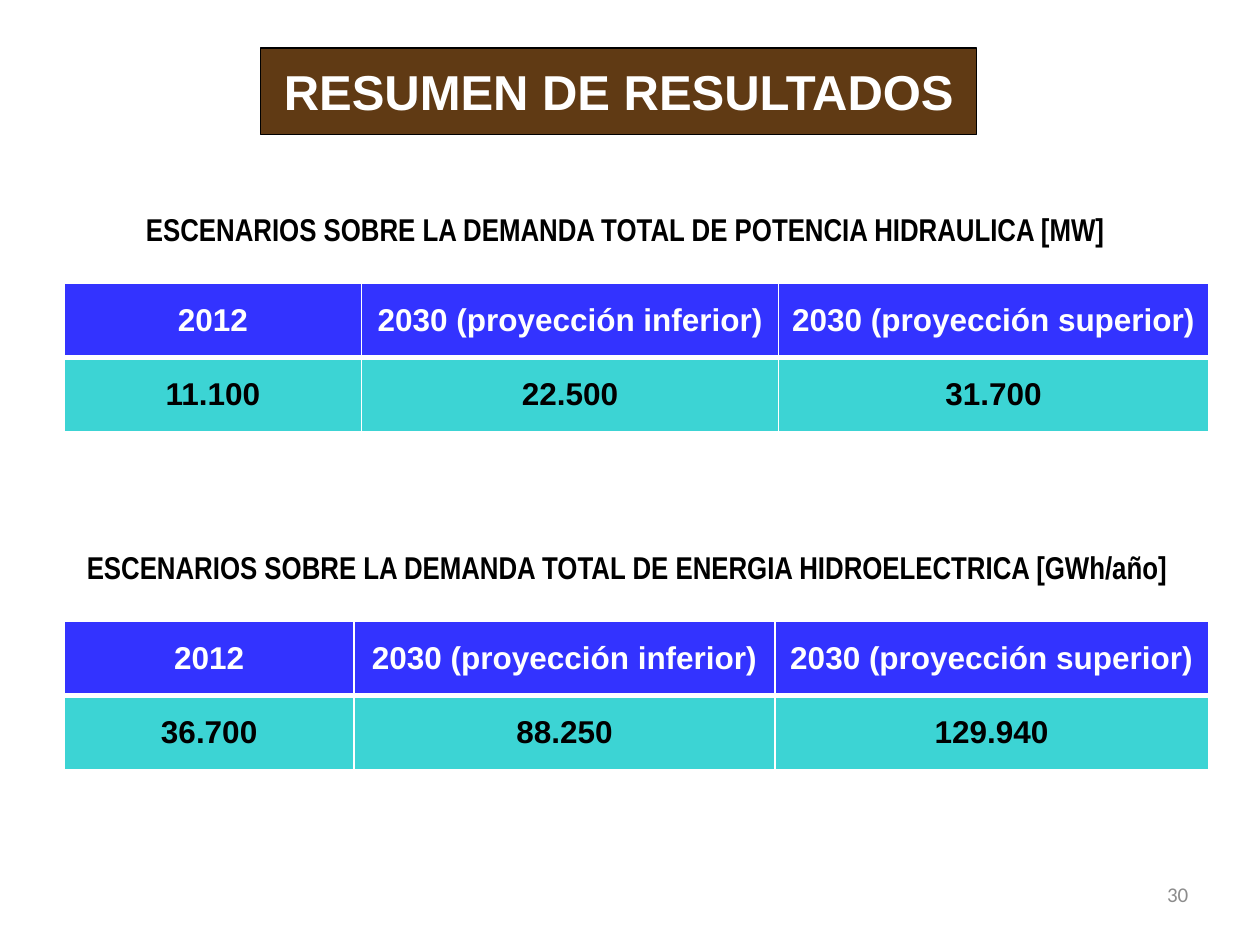
"""Build the results summary slide with two tables of demand scenarios."""
from lxml.etree import SubElement
from pptx import Presentation
from pptx.dml.color import RGBColor
from pptx.enum.shapes import MSO_SHAPE as Shape
from pptx.enum.text import MSO_ANCHOR as Anchor, MSO_AUTO_SIZE as AutoSize, PP_ALIGN as Align
from pptx.oxml.ns import qn
from pptx.util import Inches, Pt

WHITE = RGBColor(0xFF, 0xFF, 0xFF)
BLACK = RGBColor(0x00, 0x00, 0x00)
BROWN = RGBColor(0x60, 0x3A, 0x14)
BLUE = RGBColor(0x33, 0x33, 0xFF)
TURQUOISE = RGBColor(0x3C, 0xD4, 0xD4)
GRAY = RGBColor(0x8C, 0x8C, 0x8C)

HEADERS = ["2012", "2030 (proyección inferior)", "2030 (proyección superior)"]
SCENARIOS = [
    ("ESCENARIOS SOBRE LA DEMANDA TOTAL DE POTENCIA HIDRAULICA [MW]",
     1.06, 1.62, 7.88, [2.36, 3.31, 3.41], ["11.100", "22.500", "31.700"]),
    ("ESCENARIOS SOBRE LA DEMANDA TOTAL DE ENERGIA HIDROELECTRICA [GWh/año]",
     0.59, 4.3, 8.82, [2.3, 3.34, 3.44], ["36.700", "88.250", "129.940"]),
]
TABLE_LEFT = 0.51
TABLE_OFFSET = 0.63
ROW_HEIGHT = 0.59


def write_text(frame, text, font="Arial", size=18, color=BLACK, bold=True, align=Align.CENTER):
    paragraph = frame.paragraphs[0]
    paragraph.alignment = align
    run = paragraph.add_run()
    run.text = text
    run.font.name = font
    run.font.size = Pt(size)
    run.font.bold = bold
    run.font.color.rgb = color


def set_borders(cell, widths):
    properties = cell._tc.get_or_add_tcPr()
    for position, (side, width) in enumerate(widths.items()):
        line = SubElement(properties, qn(f"a:ln{side}"), w=str(Pt(width)))
        fill = SubElement(line, qn("a:solidFill"))
        SubElement(fill, qn("a:srgbClr"), val=str(WHITE))
        properties.insert(position, line)


presentation = Presentation()
presentation.slide_width = Inches(10)
presentation.slide_height = Inches(7.5)
slide = presentation.slides.add_slide(presentation.slide_layouts[6])

title = slide.shapes.add_shape(
    Shape.RECTANGLE, Inches(2.07), Inches(0.38), Inches(5.68), Inches(0.69))
title.shadow.inherit = False
title.fill.solid()
title.fill.fore_color.rgb = BROWN
title.line.color.rgb = BLACK
title.line.width = Pt(0.75)
title.text_frame.vertical_anchor = Anchor.MIDDLE
write_text(title.text_frame, "RESUMEN DE RESULTADOS", size=28, color=WHITE)

for heading, left, top, width, column_widths, values in SCENARIOS:
    heading_box = slide.shapes.add_textbox(
        Inches(left), Inches(top), Inches(width), Inches(0.4))
    heading_box.text_frame.word_wrap = True
    heading_box.text_frame.auto_size = AutoSize.SHAPE_TO_FIT_TEXT
    write_text(heading_box.text_frame, heading, font="Arial Narrow", align=Align.LEFT)

    table = slide.shapes.add_table(
        2, 3, Inches(TABLE_LEFT), Inches(top + TABLE_OFFSET),
        Inches(sum(column_widths)), Inches(2 * ROW_HEIGHT)).table
    for column, column_width in zip(table.columns, column_widths):
        column.width = Inches(column_width)
    rows = [
        (HEADERS, BLUE, WHITE, {"L": 1, "R": 1, "T": 1, "B": 3}),
        (values, TURQUOISE, BLACK, {"L": 1, "R": 1, "T": 3, "B": 1}),
    ]
    for row_index, (texts, fill_color, text_color, borders) in enumerate(rows):
        table.rows[row_index].height = Inches(ROW_HEIGHT)
        for column_index, text in enumerate(texts):
            cell = table.cell(row_index, column_index)
            cell.vertical_anchor = Anchor.MIDDLE
            cell.fill.solid()
            cell.fill.fore_color.rgb = fill_color
            set_borders(cell, borders)
            write_text(cell.text_frame, text, color=text_color)

page_number = slide.shapes.add_textbox(Inches(7.2), Inches(6.9), Inches(2.33), Inches(0.4))
page_number.text_frame.word_wrap = True
page_number.text_frame.vertical_anchor = Anchor.MIDDLE
write_text(page_number.text_frame, "30", font="Calibri", size=12, color=GRAY,
           bold=False, align=Align.RIGHT)

presentation.save("out.pptx")
